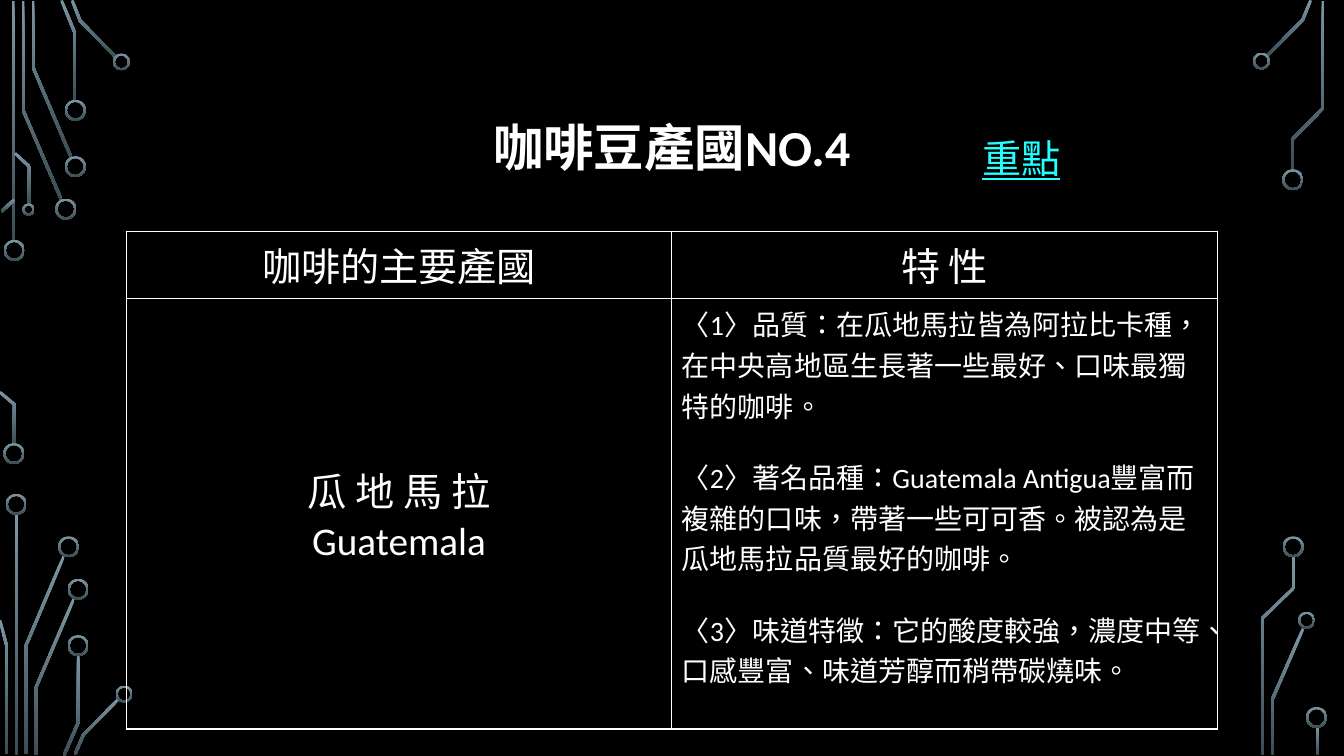
import math
from dataclasses import dataclass

import pptx
import pptx.dml.color
import pptx.enum.lang
import pptx.enum.shapes
import pptx.enum.text
import pptx.oxml
import pptx.oxml.ns
import pptx.util

Cm = pptx.util.Cm
Pt = pptx.util.Pt
Align = pptx.enum.text.PP_ALIGN
Anchor = pptx.enum.text.MSO_ANCHOR
Preset = pptx.enum.shapes.MSO_SHAPE


@dataclass(frozen=True)
class Theme:
    font: str = "Calibri"
    background: str = "000000"
    text: str = "FFFFFF"
    accent: str = "22FFFF"
    trace_top: str = "7C96A3"
    trace_bottom: str = "3B4C54"
    title_size: int = 36
    heading_size: int = 28
    body_size: int = 20
    border_width: float = 1


THEME = Theme()

# Circuit decoration, in centimetres
TRACE_WIDTH = 0.07
RING_WALL = 0.05
LARGE, MEDIUM, SMALL = 0.53, 0.43, 0.31

BARS = [(0.3, 0.03, 6.07), (0.38, 12.95, 6.07), (33.17, 18.31, 0.71)]  # left, top, height

TRACES = [
    [(1.55, 5.04), (0.58, 2.77), (0.58, 0.03)],
    [(1.8, 3.98), (0.83, 1.69), (0.83, 0.03)],
    [(1.89, 2.54), (1.89, 0.84), (1.55, 0.01)],
    [(2.93, 1.45), (2.02, 0.52), (1.82, 0.01)],
    [(0.04, 5.33), (0.36, 5.03)],
    [(0.36, 11.2), (0.36, 10.19), (0, 9.88)],
    [(0.74, 5.16), (0.74, 4.2), (0.38, 3.86)],
    [(0.65, 19), (0.65, 16.28), (1.61, 14.01)],
    [(0.17, 19), (0.17, 16.28), (0, 15.63)],
    [(0.9, 19.02), (0.9, 17.34), (1.87, 15.07)],
    [(1.61, 19.04), (1.97, 18.21), (1.97, 16.51)],
    [(1.89, 19.01), (2.1, 18.52), (3, 17.6)],
    [(31.93, 1.41), (32.83, 0.5), (33.03, 0.01)],
    [(32.07, 19.02), (32.07, 17.61), (32.84, 15.84)],
    [(32.56, 4.29), (32.56, 3.52), (33.34, 2.73), (33.34, 0.03)],
    [(31.81, 19.02), (31.81, 15.58), (32.6, 14.82), (32.6, 14.02)],
]

RINGS = {  # diameter: centres
    LARGE: [(0.36, 6.31), (0.35, 11.43), (1.66, 5.27), (1.9, 4.2), (1.9, 2.78),
            (0.41, 12.71), (1.73, 13.78), (1.97, 14.85), (1.97, 16.27),
            (32.58, 4.53), (32.59, 13.78), (33.18, 18.08)],
    MEDIUM: [(3.06, 1.56), (3.13, 17.49), (31.79, 1.54), (32.93, 15.63)],
    SMALL: [(0.72, 5.28)],
}

FEATURES = [
    "〈1〉品質：在瓜地馬拉皆為阿拉比卡種，在中央高地區生長著一些最好、口味最獨特的咖啡。",
    "〈2〉著名品種：Guatemala Antigua豐富而複雜的口味，帶著一些可可香。被認為是瓜地馬拉品質最好的咖啡。",
    "〈3〉味道特徵：它的酸度較強，濃度中等、口感豐富、味道芳醇而稍帶碳燒味。",
]


def rgb(value):
    return pptx.dml.color.RGBColor.from_string(value)


def style_trace(shape):
    shape.shadow.inherit = False
    shape.line.fill.background()
    shape.fill.gradient()
    shape.fill.gradient_angle = 270
    for stop, color in zip(shape.fill.gradient_stops, (THEME.trace_top, THEME.trace_bottom)):
        stop.color.rgb = rgb(color)


def trace_outline(points):
    """Widen a centre line into a closed outline with mitred corners."""
    normals = []
    for (x1, y1), (x2, y2) in zip(points, points[1:]):
        length = math.hypot(x2 - x1, y2 - y1)
        normals.append(((y1 - y2) / length, (x2 - x1) / length))
    near, far = [], []
    for (x, y), (ax, ay), (bx, by) in zip(points, normals[:1] + normals, normals + normals[-1:]):
        scale = TRACE_WIDTH / 2 / (1 + ax * bx + ay * by)
        dx, dy = (ax + bx) * scale, (ay + by) * scale
        near.append((Cm(x + dx), Cm(y + dy)))
        far.append((Cm(x - dx), Cm(y - dy)))
    return near + far[::-1]


def add_circuit(slide):
    shapes = slide.shapes
    for left, top, height in BARS:
        style_trace(shapes.add_shape(Preset.RECTANGLE, Cm(left), Cm(top), Cm(TRACE_WIDTH), Cm(height)))
    for points in TRACES:
        start, *others = trace_outline(points)
        builder = shapes.build_freeform(*start)
        builder.add_line_segments(others, close=True)
        style_trace(builder.convert_to_shape())
    for diameter, centres in RINGS.items():
        for x, y in centres:
            ring = shapes.add_shape(Preset.DONUT, Cm(x - diameter / 2), Cm(y - diameter / 2),
                                    Cm(diameter), Cm(diameter))
            ring.adjustments[0] = RING_WALL / diameter
            style_trace(ring)


def write_text(frame, lines, size, color=THEME.text, align=Align.CENTER, gap=0, bold=False):
    for index, line in enumerate(lines):
        paragraph = frame.add_paragraph() if index else frame.paragraphs[0]
        paragraph.text = line
        paragraph.alignment = align
        if index and gap:
            paragraph.space_before = Pt(gap)
        font = paragraph.font
        font.name = THEME.font
        font.size = Pt(size)
        font.bold = bold
        font.color.rgb = rgb(color)
        font.language_id = pptx.enum.lang.MSO_LANGUAGE_ID.TRADITIONAL_CHINESE


def add_title(slide, text):
    title = slide.shapes.title
    title.left, title.top, title.width, title.height = Cm(3.18), Cm(1.73), Cm(27.5), Cm(4.1)
    title.text_frame.vertical_anchor = Anchor.MIDDLE
    write_text(title.text_frame, [text], THEME.title_size, bold=True)
    title.text_frame.paragraphs[0].line_spacing = 0.9


def add_label(slide, text):
    label = slide.shapes.add_textbox(Cm(24.49), Cm(3.25), Cm(2.5), Cm(1.45))
    label.text_frame.word_wrap = False
    write_text(label.text_frame, [text], THEME.heading_size, THEME.accent)
    label.text_frame.paragraphs[0].font.underline = True


def format_cell(cell, anchor=Anchor.MIDDLE):
    cell.vertical_anchor = anchor
    cell.fill.background()
    properties = cell._tc.get_or_add_tcPr()
    for index, side in enumerate(("lnL", "lnR", "lnT", "lnB")):
        properties.insert(index, pptx.oxml.parse_xml(
            f'<a:{side} {pptx.oxml.ns.nsdecls("a")} w="{Pt(THEME.border_width)}">'
            f'<a:solidFill><a:srgbClr val="{THEME.text}"/></a:solidFill></a:{side}>'))


def add_country_table(slide):
    table = slide.shapes.add_table(2, 2, Cm(3.18), Cm(5.83), Cm(27.5), Cm(12.54)).table
    table.first_row = False
    table.horz_banding = False
    for row, height in zip(table.rows, (1.68, 10.86)):
        row.height = Cm(height)
    for column, heading in enumerate(("咖啡的主要產國", "特 性")):
        cell = table.cell(0, column)
        format_cell(cell)
        write_text(cell.text_frame, [heading], THEME.heading_size)
    country, features = table.cell(1, 0), table.cell(1, 1)
    format_cell(country)
    write_text(country.text_frame, ["瓜 地 馬 拉", "Guatemala"], THEME.heading_size)
    format_cell(features, Anchor.TOP)
    write_text(features.text_frame, FEATURES, THEME.body_size, align=Align.LEFT, gap=22)


def main():
    presentation = pptx.Presentation()
    presentation.slide_width, presentation.slide_height = Cm(33.87), Cm(19.05)
    slide = presentation.slides.add_slide(presentation.slide_layouts[5])
    slide.background.fill.solid()
    slide.background.fill.fore_color.rgb = rgb(THEME.background)
    add_circuit(slide)
    add_title(slide, "咖啡豆產國NO.4")
    add_country_table(slide)
    add_label(slide, "重點")
    presentation.save("out.pptx")


if __name__ == "__main__":
    main()
